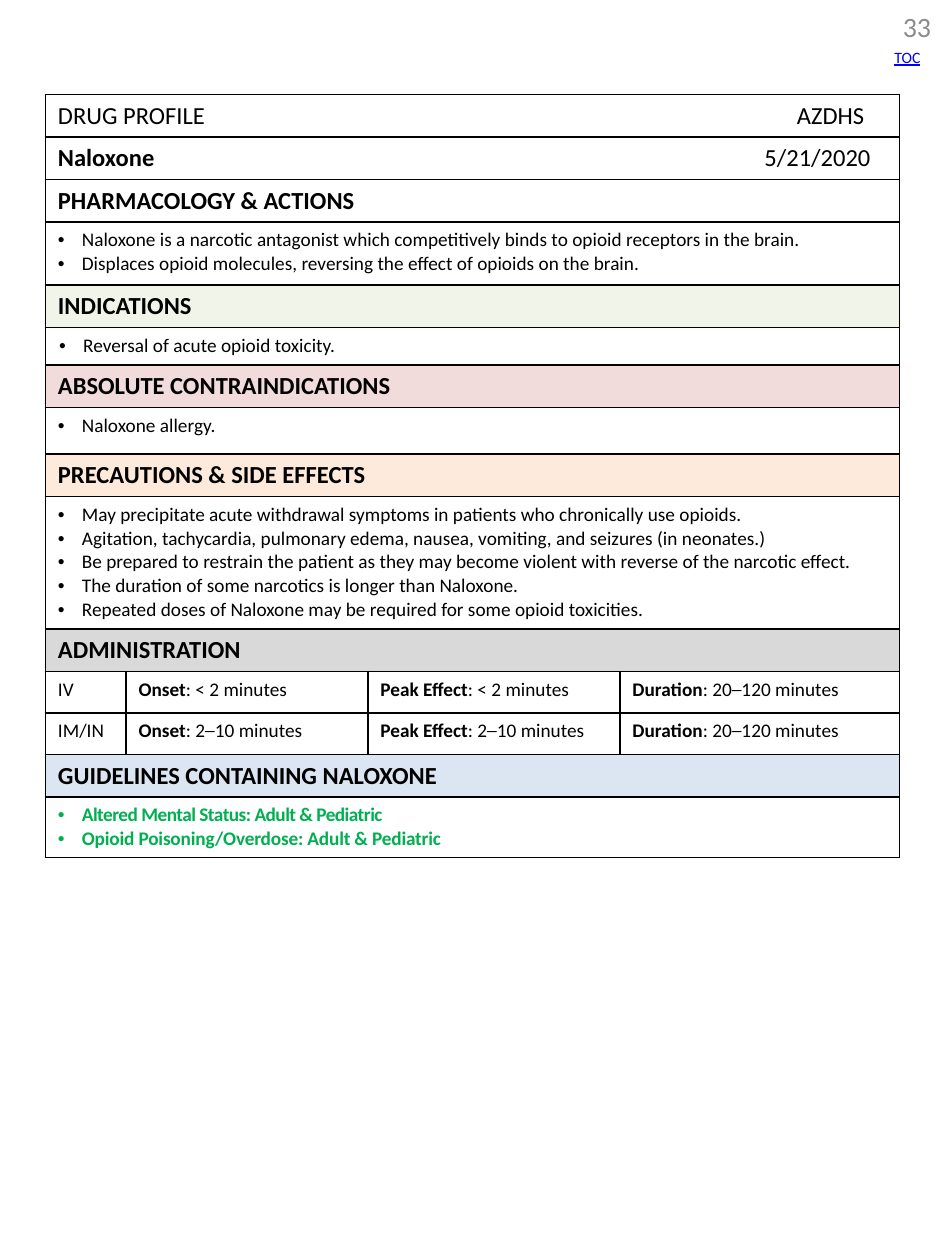
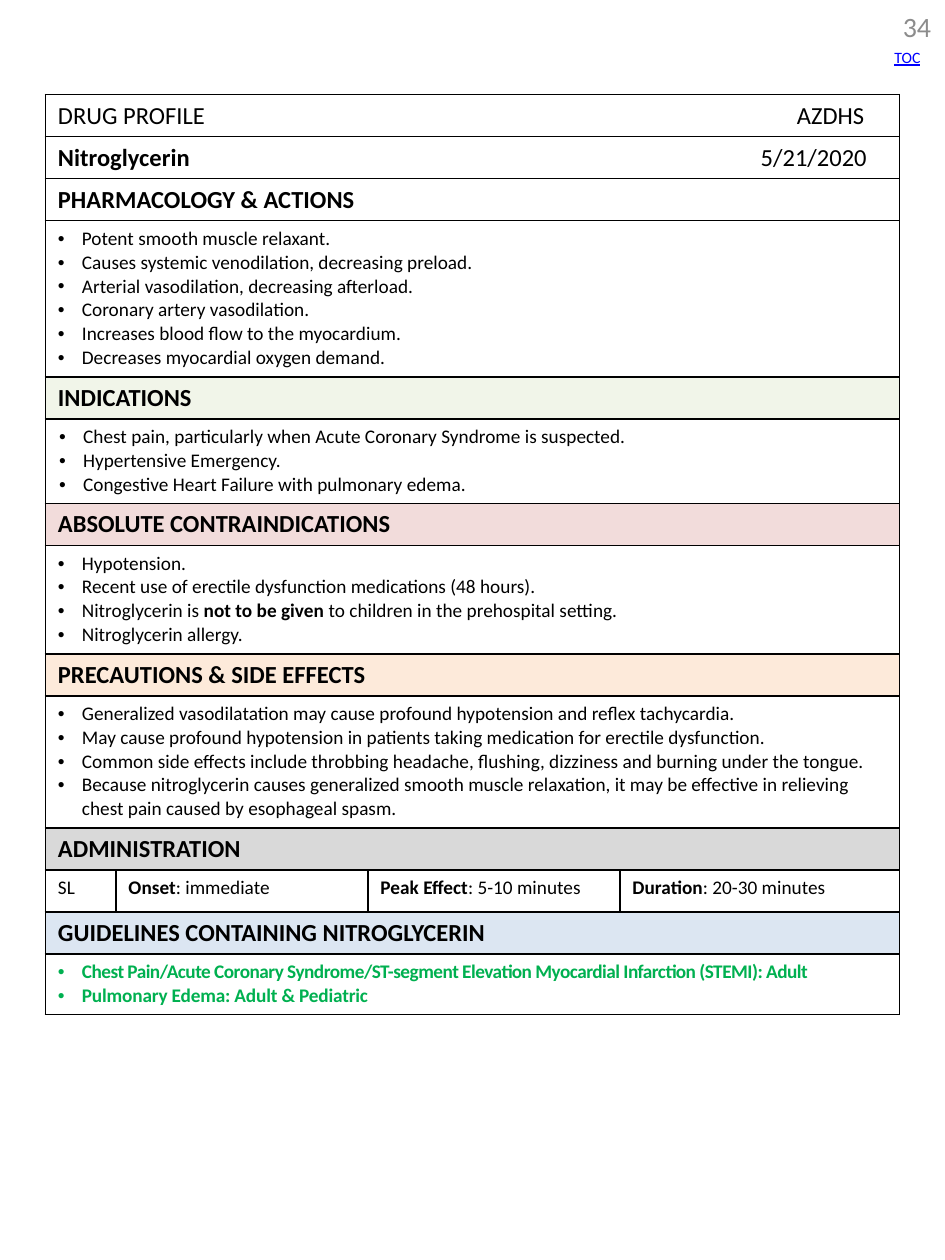
"""Build two drug profile pages, each a ruled table with a page number."""
from dataclasses import dataclass
from lxml import etree
from pptx import Presentation
from pptx.dml.color import RGBColor
from pptx.enum.text import MSO_ANCHOR, PP_ALIGN
from pptx.oxml.ns import qn
from pptx.util import Inches, Pt

MIDDLE, TOP = MSO_ANCHOR.MIDDLE, MSO_ANCHOR.TOP
LEFT, RIGHT = PP_ALIGN.LEFT, PP_ALIGN.RIGHT


@dataclass(frozen=True)
class Theme:
    font: str = "Calibri"
    ink: str = "000000"
    gray: str = "8C8C8C"
    link: str = "0000FF"
    guide: str = "00B050"
    green: str = "EBF1DE"
    rose: str = "F2DCDB"
    peach: str = "FDEADA"
    silver: str = "D9D9D9"
    blue: str = "DCE6F2"
    head: int = 14
    body: int = 11
    page: int = 16
    small: int = 9


THEME = Theme()
HEAD_ROW = 0.33
LINE_ROW = 0.19
LINE_CHARS = 105

SECTIONS = [
    ("PHARMACOLOGY & ACTIONS", None, 100, 0.19),
    ("INDICATIONS", THEME.green, 65, 0.2),
    ("ABSOLUTE CONTRAINDICATIONS", THEME.rose, 100, 0.19),
    ("PRECAUTIONS & SIDE EFFECTS", THEME.peach, 100, 0.19),
]

DRUGS = [
    {
        "name": "Naloxone", "page": 33, "date": 6.45,
        "cols": [0.64, 1.92, 2, 2.22], "least": [0.5, 0.3, 0.37, 0.68],
        "facts": [
            ["Naloxone is a narcotic antagonist which competitively binds to opioid receptors in the brain.",
             "Displaces opioid molecules, reversing the effect of opioids on the brain."],
            ["Reversal of acute opioid toxicity."],
            ["Naloxone allergy."],
            ["May precipitate acute withdrawal symptoms in patients who chronically use opioids.",
             "Agitation, tachycardia, pulmonary edema, nausea, vomiting, and seizures (in neonates.)",
             "Be prepared to restrain the patient as they may become violent with reverse of the narcotic effect.",
             "The duration of some narcotics is longer than Naloxone.",
             "Repeated doses of Naloxone may be required for some opioid toxicities."],
        ],
        "doses": [("IV", "< 2 minutes", "< 2 minutes", "20─120 minutes"),
                  ("IM/IN", "2─10 minutes", "2─10 minutes", "20─120 minutes")],
        "guides": ["Altered Mental Status: Adult & Pediatric",
                   "Opioid Poisoning/Overdose: Adult & Pediatric"],
    },
    {
        "name": "Nitroglycerin", "page": 34, "date": 6.42,
        "cols": [0.56, 2, 2, 2.22], "least": [0.5, 0.3, 0.35, 0.68],
        "facts": [
            ["Potent smooth muscle relaxant.",
             "Causes systemic venodilation, decreasing preload.",
             "Arterial vasodilation, decreasing afterload.",
             "Coronary artery vasodilation.",
             "Increases blood flow to the myocardium.",
             "Decreases myocardial oxygen demand."],
            ["Chest pain, particularly when Acute Coronary Syndrome is suspected.",
             "Hypertensive Emergency.",
             "Congestive Heart Failure with pulmonary edema."],
            ["Hypotension.",
             "Recent use of erectile dysfunction medications (48 hours).",
             "Nitroglycerin is *not to be given* to children in the prehospital setting.",
             "Nitroglycerin allergy."],
            ["Generalized vasodilatation may cause profound hypotension and reflex tachycardia.",
             "May cause profound hypotension in patients taking medication for erectile dysfunction.",
             "Common side effects include throbbing headache, flushing, dizziness and burning under the tongue.",
             "Because nitroglycerin causes generalized smooth muscle relaxation, it may be effective "
             "in relieving chest pain caused by esophageal spasm."],
        ],
        "doses": [("SL", "immediate", "5-10 minutes", "20-30 minutes")],
        "guides": ["Chest Pain/Acute Coronary Syndrome/ST-segment Elevation Myocardial Infarction (STEMI): Adult",
                   "Pulmonary Edema: Adult & Pediatric"],
    },
]


def add_node(parent, tag, **attrs):
    return etree.SubElement(parent, qn(tag), {key: str(val) for key, val in attrs.items()})


class Deck:
    def __init__(self, theme):
        self.theme = theme
        self.show = Presentation()
        self.show.slide_width, self.show.slide_height = Inches(7.5), Inches(10)
        self.slide = self.table = None
        self.row = 0

    def start(self):
        self.slide = self.show.slides.add_slide(self.show.slide_layouts[6])

    def style(self, run, size, color, bold=False):
        font = run.font
        font.name, font.size, font.bold = self.theme.font, Pt(size), bold
        font.color.rgb = RGBColor.from_string(color)

    def fill_in(self, para, text, size, color=None, bold=False):
        for part in text.split("*"):
            if part:
                run = para.add_run()
                run.text = part
                self.style(run, size, color or self.theme.ink, bold)
            bold = not bold

    def label(self, text, box, size, color, align=LEFT, inset=True, under=False):
        shape = self.slide.shapes.add_textbox(*map(Inches, box))
        frame = shape.text_frame
        frame.word_wrap = True
        if not inset:
            frame.margin_left = frame.margin_right = 0
            frame.margin_top = frame.margin_bottom = 0
        para = frame.paragraphs[0]
        para.text, para.alignment = text, align
        self.style(para.runs[0], size, color)
        para.runs[0].font.underline = under

    def grid(self, count, cols):
        frame = self.slide.shapes.add_table(
            count, len(cols), Inches(0.36), Inches(0.75),
            Inches(sum(cols)), Inches(HEAD_ROW * count))
        self.table, self.row = frame.table, 0
        self.table.first_row = self.table.horz_banding = False
        for col, width in zip(self.table.columns, cols):
            col.width = Inches(width)
        for cell in self.table.iter_cells():
            self.border(cell)

    def border(self, cell):
        props = cell._tc.get_or_add_tcPr()
        for side in "LRTB":
            line = add_node(props, f"a:ln{side}", w=Pt(1))
            add_node(add_node(line, "a:solidFill"), "a:srgbClr", val=self.theme.ink)
        cell.fill.background()

    def next_row(self, height=HEAD_ROW):
        cells = self.table.rows[self.row].cells
        self.table.rows[self.row].height = Inches(height)
        self.row += 1
        return list(cells)

    def wide(self, height=HEAD_ROW, anchor=TOP):
        cells = self.next_row(height)
        cells[0].merge(cells[-1])
        cells[0].vertical_anchor = anchor
        return cells[0]

    def head(self, text, fill=None, alpha=100, bold=True, stop=None):
        cell = self.wide(anchor=MIDDLE)
        para = cell.text_frame.paragraphs[0]
        self.fill_in(para, text, self.theme.head, bold=bold)
        if stop:
            tabs = add_node(para._p.get_or_add_pPr(), "a:tabLst")
            add_node(tabs, "a:tab", pos=Inches(stop), algn="r")
        if fill:
            cell.fill.solid()
            cell.fill.fore_color.rgb = RGBColor.from_string(fill)
            if alpha < 100:
                color = cell._tc.tcPr.find(qn("a:solidFill"))[0]
                add_node(color, "a:alpha", val=alpha * 1000)

    def bullets(self, items, least=0, indent=0.19, color=None, bold=False, tight=()):
        lines = sum(1 + len(item) // LINE_CHARS for item in items)
        frame = self.wide(max(least, LINE_ROW * lines + 0.1)).text_frame
        for index, item in enumerate(items):
            para = frame.add_paragraph() if index else frame.paragraphs[0]
            props = para._p.get_or_add_pPr()
            props.set("marL", str(Inches(indent)))
            props.set("indent", str(-Inches(0.19)))
            add_node(props, "a:buFont", typeface="Arial")
            add_node(props, "a:buChar", char="•")
            self.fill_in(para, item, self.theme.body, color, bold)
            if tight:
                para.runs[0].font._element.set("spc", str(tight[index]))

    def dose(self, route, *times):
        names = ("Onset", "Peak Effect", "Duration")
        texts = [route] + [f"*{name}*: {time}" for name, time in zip(names, times)]
        for cell, text in zip(self.next_row(), texts):
            self.fill_in(cell.text_frame.paragraphs[0], text, self.theme.body)

    def profile(self, drug):
        look = self.theme
        self.start()
        self.grid(5 + 2 * len(SECTIONS) + len(drug["doses"]), drug["cols"])
        self.head("DRUG PROFILE\tAZDHS", bold=False, stop=6.4)
        self.head(f"{drug['name']}*\t5/21/2020", stop=drug["date"])
        for section, facts, least in zip(SECTIONS, drug["facts"], drug["least"]):
            title, fill, alpha, indent = section
            self.head(title, fill, alpha)
            self.bullets(facts, least, indent)
        self.head("ADMINISTRATION", look.silver)
        for dose in drug["doses"]:
            self.dose(*dose)
        self.head(f"GUIDELINES CONTAINING {drug['name'].upper()}", look.blue)
        self.bullets(drug["guides"], color=look.guide, bold=True, tight=(-30, -10))
        self.label(str(drug["page"]), (6.92, 0.08, 0.47, 0.27), look.page, look.gray,
                   RIGHT, inset=False)
        self.label("TOC", (7, 0.33, 0.42, 0.25), look.small, look.link, under=True)


def main():
    deck = Deck(THEME)
    for drug in DRUGS:
        deck.profile(drug)
    deck.show.save("out.pptx")


if __name__ == "__main__":
    main()
